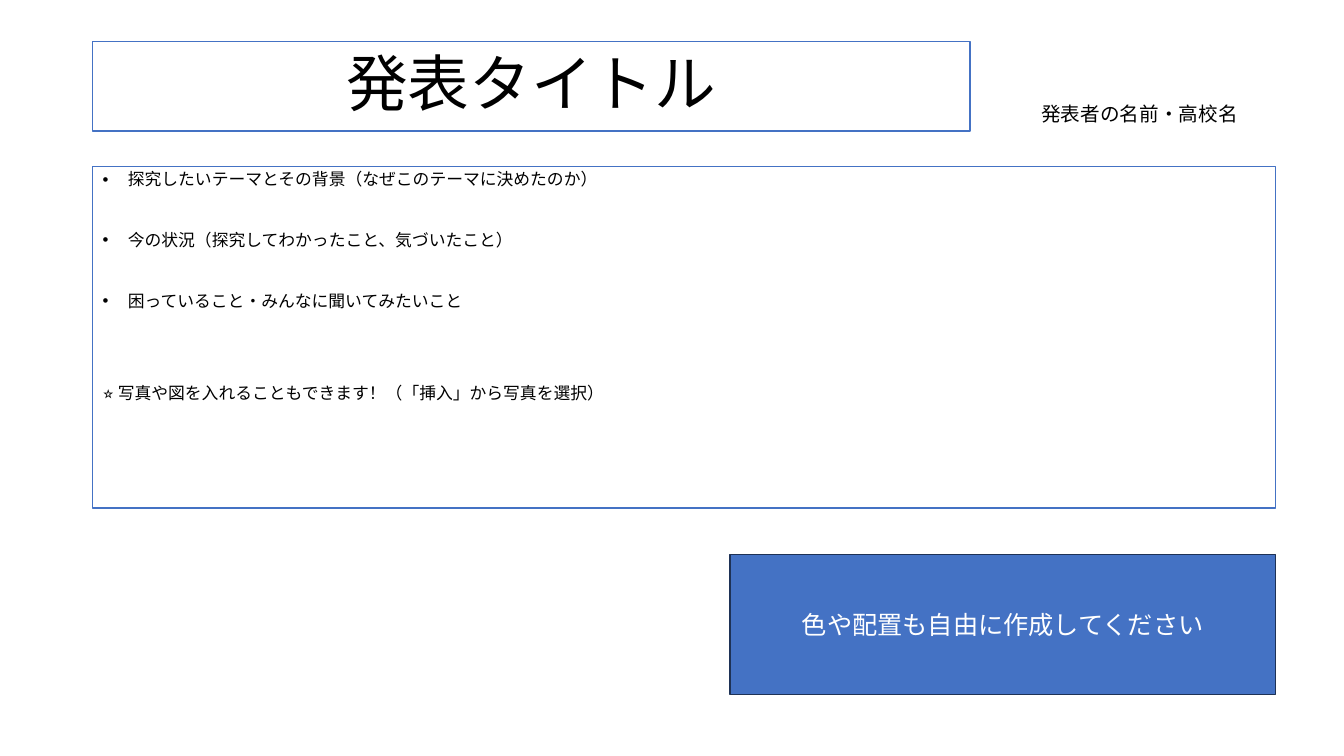
from dataclasses import dataclass
from typing import Optional

import pptx
import pptx.dml.color
import pptx.enum.shapes
import pptx.enum.text
import pptx.oxml.ns
import pptx.util
from lxml import etree

Inches = pptx.util.Inches
Pt = pptx.util.Pt
Align = pptx.enum.text.PP_ALIGN
Anchor = pptx.enum.text.MSO_ANCHOR

FONT = "Noto Sans CJK JP"
COLORS = {"white": "FFFFFF", "black": "000000", "blue": "4472C4", "navy": "1E3256"}
LEFT, RIGHT = 0.92, 12.65


@dataclass
class Line:
    text: str
    space_before: float = 0
    bullet: bool = False


@dataclass
class Panel:
    left: float
    top: float
    width: float
    height: float
    lines: list[Line]
    size: float
    fill: str = "white"
    border: Optional[str] = None
    border_width: float = 1
    ink: str = "black"
    align: Align = Align.LEFT
    anchor: Anchor = Anchor.TOP
    line_spacing: float = 1.0


def rgb(name: str) -> pptx.dml.color.RGBColor:
    return pptx.dml.color.RGBColor.from_string(COLORS[name])


def write_line(paragraph, line: Line, panel: Panel) -> None:
    paragraph.text = line.text
    paragraph.alignment = panel.align
    paragraph.line_spacing = panel.line_spacing
    paragraph.space_before = Pt(line.space_before)
    if line.bullet:
        properties = paragraph._p.get_or_add_pPr()
        properties.set("marL", str(Inches(0.25)))
        properties.set("indent", str(Inches(-0.25)))
        typeface = etree.SubElement(properties, pptx.oxml.ns.qn("a:buFont"))
        typeface.set("typeface", "Arial")
        etree.SubElement(properties, pptx.oxml.ns.qn("a:buChar")).set("char", "•")
    font = paragraph.font
    font.size = Pt(panel.size)
    font.color.rgb = rgb(panel.ink)
    font.name = FONT
    east_asian = etree.SubElement(font._element, pptx.oxml.ns.qn("a:ea"))
    east_asian.set("typeface", FONT)


def draw_panel(slide, panel: Panel) -> None:
    box = slide.shapes.add_shape(
        pptx.enum.shapes.MSO_SHAPE.RECTANGLE,
        Inches(panel.left), Inches(panel.top),
        Inches(panel.width), Inches(panel.height),
    )
    box.shadow.inherit = False
    box.fill.solid()
    box.fill.fore_color.rgb = rgb(panel.fill)
    if panel.border:
        box.line.color.rgb = rgb(panel.border)
        box.line.width = Pt(panel.border_width)
    else:
        box.line.fill.background()
    frame = box.text_frame
    frame.word_wrap = True
    frame.vertical_anchor = panel.anchor
    for index, line in enumerate(panel.lines):
        paragraph = frame.add_paragraph() if index else frame.paragraphs[0]
        write_line(paragraph, line, panel)


PANELS = [
    Panel(LEFT, 0.41, 8.7, 0.89, [Line("発表タイトル")], 44, border="blue",
          align=Align.CENTER, anchor=Anchor.MIDDLE, line_spacing=0.9),
    Panel(RIGHT - 2.42, 0.96, 2.42, 0.34, [Line("発表者の名前・高校名")], 14),
    Panel(LEFT, 1.65, RIGHT - LEFT, 3.39, [
        Line("探究したいテーマとその背景（なぜこのテーマに決めたのか）", bullet=True),
        Line("今の状況（探究してわかったこと、気づいたこと）", 30.5, True),
        Line("困っていること・みんなに聞いてみたいこと", 30.5, True),
        Line("⭐︎ 写真や図を入れることもできます！（「挿入」から写真を選択）", 53),
    ], 12, border="blue", border_width=0.75, line_spacing=0.9),
    Panel(RIGHT - 5.41, 5.5, 5.41, 1.39, [Line("色や配置も自由に作成してください")], 18,
          fill="blue", border="navy", ink="white",
          align=Align.CENTER, anchor=Anchor.MIDDLE),
]


def main() -> None:
    presentation = pptx.Presentation()
    presentation.slide_width = Inches(13.33)
    presentation.slide_height = Inches(7.5)
    slide = presentation.slides.add_slide(presentation.slide_layouts[6])
    for panel in PANELS:
        draw_panel(slide, panel)
    presentation.save("out.pptx")


if __name__ == "__main__":
    main()
